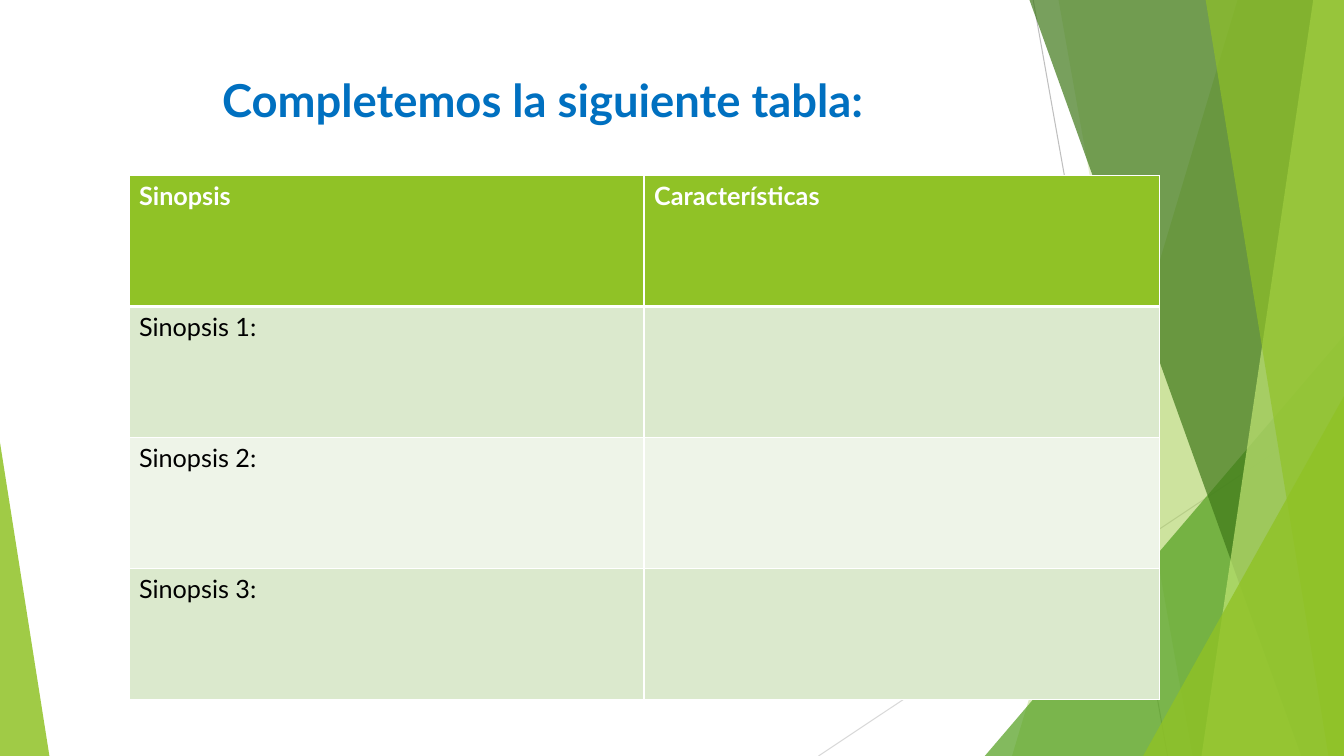
from dataclasses import dataclass

from lxml.etree import SubElement
from pptx import Presentation
from pptx.dml.color import RGBColor
from pptx.enum.shapes import MSO_CONNECTOR, MSO_SHAPE
from pptx.enum.text import MSO_ANCHOR, PP_ALIGN
from pptx.oxml.ns import qn
from pptx.shapes.autoshape import Shape
from pptx.slide import Slide
from pptx.table import _Cell
from pptx.text.text import _Run
from pptx.util import Pt

WIDTH, HEIGHT = 960, 540
VEIL_TOP = -0.72
FONT = "Lato"
GREEN, WHITE, BLACK, BLUE = "90C226", "FFFFFF", "000000", "0070C0"
ROW_FILLS = [GREEN, "DBE9CD", "EEF4E8", "DBE9CD"]
ROWS = [
    ("Sinopsis", "Características"),
    ("Sinopsis 1:", ""),
    ("Sinopsis 2:", ""),
    ("Sinopsis 3:", ""),
]


@dataclass
class Ray:
    start: tuple[float, float]
    end: tuple[float, float]
    color: str


@dataclass
class Veil:
    top_left: float
    bottom_left: float
    color: str
    opacity: int


@dataclass
class Wedge:
    left: float
    top: float
    width: float
    apex: float
    color: str
    opacity: int


DECORATION = [
    Ray((738, 0), (834, HEIGHT), "BFBFBF"),
    Ray((WIDTH, 290.16), (584.64, HEIGHT), "D9D9D9"),
    Veil(884.16, 722.88, GREEN, 30),
    Veil(756, 851.76, GREEN, 20),
    Wedge(703.44, 239.76, 256.56, 1, "54A021", 72),
    Veil(735.12, 929.52, "3F7819", 70),
    Veil(938.16, 858.24, "C0E474", 70),
    Veil(861.12, 948.96, GREEN, 65),
    Wedge(816.48, 282.96, 143.52, 1, GREEN, 80),
    Wedge(0, 316.08, 35.28, 0, GREEN, 85),
]


def rgb(color: str) -> RGBColor:
    return RGBColor.from_string(color)


def paint(shape: Shape, color: str, opacity: int) -> None:
    shape.shadow.inherit = False
    shape.line.fill.background()
    shape.fill.solid()
    shape.fill.fore_color.rgb = rgb(color)
    tint = shape.fill._xPr.find(qn("a:solidFill"))[0]
    SubElement(tint, qn("a:alpha"), val=str(opacity * 1000))


def draw_ray(slide: Slide, ray: Ray) -> None:
    ends = [Pt(value) for value in ray.start + ray.end]
    connector = slide.shapes.add_connector(MSO_CONNECTOR.STRAIGHT, *ends)
    connector.line.color.rgb = rgb(ray.color)
    connector.line.width = Pt(0.75)
    SubElement(connector._element.spPr, qn("a:effectLst"))


def draw_veil(slide: Slide, veil: Veil) -> None:
    corners = [(WIDTH, VEIL_TOP), (WIDTH, HEIGHT), (veil.bottom_left, HEIGHT)]
    builder = slide.shapes.build_freeform(Pt(veil.top_left), Pt(VEIL_TOP))
    builder.add_line_segments([(Pt(x), Pt(y)) for x, y in corners], close=True)
    paint(builder.convert_to_shape(), veil.color, veil.opacity)


def draw_wedge(slide: Slide, wedge: Wedge) -> None:
    triangle = slide.shapes.add_shape(
        MSO_SHAPE.ISOSCELES_TRIANGLE,
        Pt(wedge.left), Pt(wedge.top), Pt(wedge.width), Pt(HEIGHT - wedge.top),
    )
    triangle.adjustments[0] = wedge.apex
    paint(triangle, wedge.color, wedge.opacity)


def style_run(run: _Run, size: float, color: str, bold: bool) -> None:
    run.font.name = FONT
    run.font.size = Pt(size)
    run.font.bold = bold
    run.font.color.rgb = rgb(color)


def draw_title(slide: Slide) -> None:
    title = slide.shapes.add_textbox(Pt(53.28), Pt(48.24), Pt(676.8), Pt(46.08))
    frame = title.text_frame
    frame.word_wrap = True
    frame.vertical_anchor = MSO_ANCHOR.MIDDLE
    frame.text = "Completemos la siguiente tabla: "
    frame.paragraphs[0].alignment = PP_ALIGN.CENTER
    style_run(frame.paragraphs[0].runs[0], 32.4, BLUE, True)


def set_borders(cell: _Cell, top: int, bottom: int) -> None:
    properties = cell._tc.get_or_add_tcPr()
    widths = {"a:lnL": 1, "a:lnR": 1, "a:lnT": top, "a:lnB": bottom}
    for index, (side, width) in enumerate(widths.items()):
        border = SubElement(properties, qn(side), w=str(Pt(width)))
        fill = SubElement(border, qn("a:solidFill"))
        SubElement(fill, qn("a:srgbClr"), val=WHITE)
        properties.insert(index, border)


def draw_table(slide: Slide) -> None:
    table = slide.shapes.add_table(
        len(ROWS), 2, Pt(92.16), Pt(125.28), Pt(735.84), Pt(374.4)
    ).table
    for row, (texts, fill) in enumerate(zip(ROWS, ROW_FILLS)):
        header = row == 0
        for column, text in enumerate(texts):
            cell = table.cell(row, column)
            cell.fill.solid()
            cell.fill.fore_color.rgb = rgb(fill)
            set_borders(cell, 3 if row == 1 else 1, 3 if header else 1)
            cell.text_frame.text = text
            for run in cell.text_frame.paragraphs[0].runs:
                style_run(run, 18, WHITE if header else BLACK, header)


def main() -> None:
    presentation = Presentation()
    presentation.slide_width = Pt(WIDTH)
    presentation.slide_height = Pt(HEIGHT)
    slide = presentation.slides.add_slide(presentation.slide_layouts[6])
    painters = {Ray: draw_ray, Veil: draw_veil, Wedge: draw_wedge}
    for part in DECORATION:
        painters[type(part)](slide, part)
    draw_title(slide)
    draw_table(slide)
    presentation.save("out.pptx")


if __name__ == "__main__":
    main()
